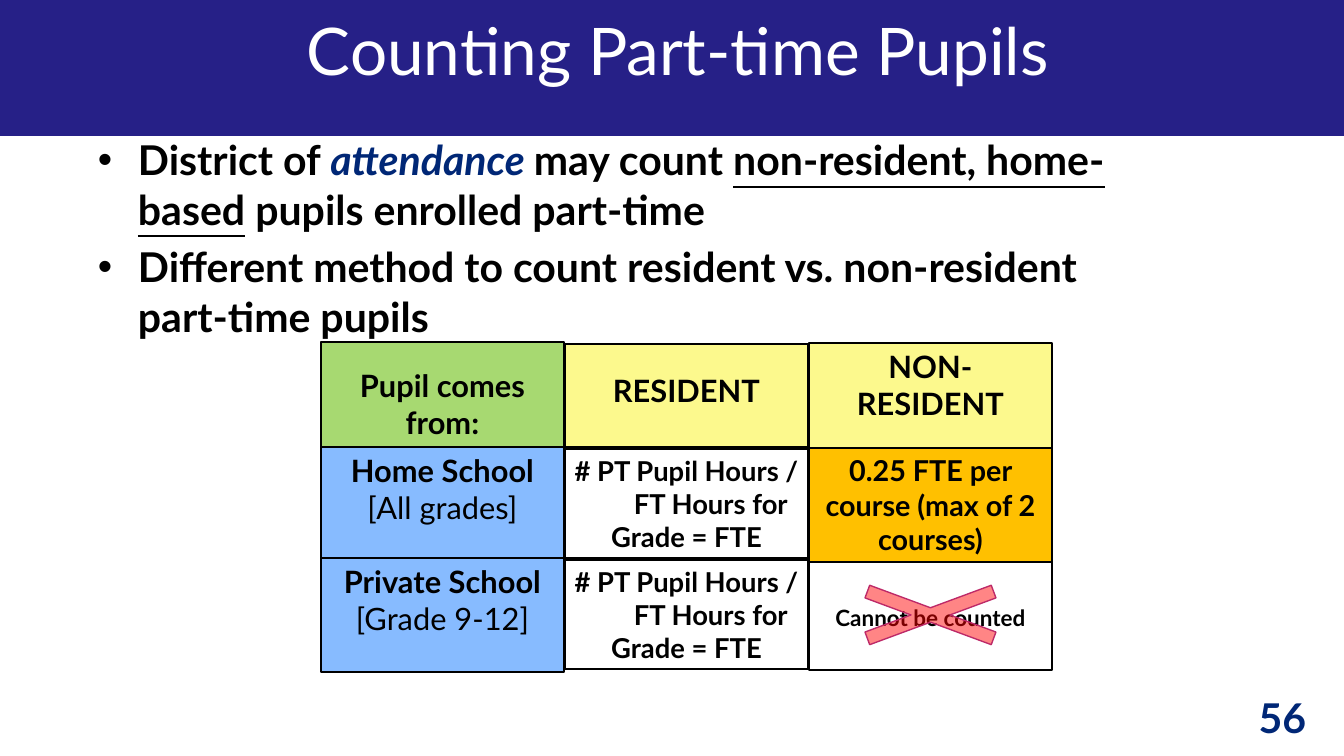
from dataclasses import dataclass

from lxml.etree import SubElement
from pptx import Presentation
from pptx.dml.color import RGBColor
from pptx.enum.shapes import MSO_SHAPE as Preset
from pptx.enum.text import MSO_ANCHOR as Anchor, MSO_AUTO_SIZE as AutoSize, PP_ALIGN as Align
from pptx.oxml.ns import qn
from pptx.util import Emu, Pt

SCALE = 914400 / 98.5  # EMU per px
FONT = "Lato"
COLORS = {
    "banner": "262087", "navy": "002776", "white": "FFFFFF", "black": "000000",
    "green": "A7D971", "blue": "87BBFF", "yellow": "FCF98D", "orange": "FFC000",
    "red": "FF0000", "crimson": "BD2968",
}
COLUMN_LEFT, COLUMN_STEP, COLUMN_WIDTH = 321, 244, 243


@dataclass
class Span:
    text: str
    size: float = 22.5
    color: str = "black"
    bold: bool = True
    italic: bool = False
    underline: bool = False


@dataclass
class Line:
    spans: list[Span]
    align: Align = Align.CENTER
    indent: int = 0
    bullet: bool = False


@dataclass
class Cell:
    column: int
    top: int
    height: int
    fill: str | None
    lines: list[Line]
    inset_top: int = 5


def px(value: int) -> Emu:
    return Emu(round(value * SCALE))


def rgb(name: str) -> RGBColor:
    return RGBColor.from_string(COLORS[name])


def set_all(target, values: dict) -> None:
    for name, value in values.items():
        setattr(target, name, value)


def write(shape, lines: list[Line], inset_top: int = 5) -> None:
    frame = shape.text_frame
    set_all(frame, {
        "word_wrap": True, "auto_size": AutoSize.NONE, "vertical_anchor": Anchor.TOP,
        "margin_left": px(9), "margin_right": px(9),
        "margin_top": px(inset_top), "margin_bottom": px(5),
    })
    for index, line in enumerate(lines):
        para = frame.add_paragraph() if index else frame.paragraphs[0]
        props = para._p.get_or_add_pPr()
        if line.bullet:
            props.set("marL", str(px(line.indent)))
            props.set("indent", str(-px(line.indent)))
            SubElement(props, qn("a:buFont")).set("typeface", "Arial")
            SubElement(props, qn("a:buChar")).set("char", "•")
            para.space_after = Pt(6.1)
        elif line.indent:
            props.set("marL", "0")
            props.set("indent", str(px(line.indent)))
        para.alignment = line.align
        for span in line.spans:
            run = para.add_run()
            run.text = span.text
            set_all(run.font, {
                "name": FONT, "size": Pt(span.size), "bold": span.bold,
                "italic": span.italic, "underline": span.underline,
            })
            run.font.color.rgb = rgb(span.color)


def draw(shapes, preset: Preset, box: tuple[int, int, int, int],
         fill: str | None, outline: str | None):
    shape = shapes.add_shape(preset, *map(px, box))
    shape.shadow.inherit = False
    if fill:
        shape.fill.solid()
        shape.fill.fore_color.rgb = rgb(fill)
    else:
        shape.fill.background()
    if outline:
        shape.line.color.rgb = rgb(outline)
        shape.line.width = Pt(1)
    else:
        shape.line.fill.background()
    return shape


def add_text(page, box: tuple[int, int, int, int], lines: list[Line]) -> None:
    write(page.shapes.add_textbox(*map(px, box)), lines)


def school(name: str, grades: str) -> list[Line]:
    return [Line([Span(name)]), Line([Span(grades, bold=False)])]


HOURS = [
    Line([Span("# PT Pupil Hours /", 20)]),
    Line([Span("FT Hours for Grade = FTE", 20)], indent=48),
]
CELLS = [
    Cell(0, 342, 142, "green", [Line([Span("Pupil comes from:")])], 25),
    Cell(0, 447, 122, "blue", school("Home School", "[All grades]")),
    Cell(0, 558, 114, "blue", school("Private School", "[Grade 9-12]")),
    Cell(1, 344, 103, "yellow", [Line([Span("RESIDENT")])], 28),
    Cell(2, 343, 122, "yellow", [Line([Span("NON-RESIDENT")])]),
    Cell(2, 448, 114, "orange", [Line([Span("0.25 FTE per course (max of 2 courses)", 21)])]),
    Cell(1, 560, 109, None, HOURS),
    Cell(1, 449, 109, None, HOURS),
    Cell(2, 562, 108, None, [Line([Span("Cannot be counted", 16.4)])], 42),
]
POINTS = [
    [
        Span("District of ", 30),
        Span("attendance ", 30, "navy", italic=True),
        Span("may count ", 30),
        Span("non-resident, home-based", 30, underline=True),
        Span(" pupils enrolled part-time", 30),
    ],
    [Span("Different method to count resident vs. non-resident part-time pupils", 30)],
]


def main() -> None:
    deck = Presentation()
    deck.slide_width, deck.slide_height = px(1344), px(756)
    page = deck.slides.add_slide(deck.slide_layouts[5])

    # Banner behind the title
    banner = draw(page.shapes, Preset.RECTANGLE, (-1, 0, 1346, 136), "banner", None)
    page.shapes._spTree.insert(2, banner._element)
    title = page.shapes.title
    set_all(title, {"left": px(12), "top": px(14), "width": px(1332), "height": px(126)})
    write(title, [Line([Span("Counting Part-time Pupils", 48, "white", bold=False)])])
    title.text_frame.paragraphs[0].line_spacing = 0.9

    # Slide number
    add_text(page, (1221, 687, 123, 60), [Line([Span("56", 30, "navy")])])

    # Grid of counting methods
    grid = page.shapes.add_group_shape().shapes
    for cell in CELLS:
        left = COLUMN_LEFT + cell.column * COLUMN_STEP
        shape = draw(grid, Preset.RECTANGLE, (left, cell.top, COLUMN_WIDTH, cell.height),
                     cell.fill, "black")
        write(shape, cell.lines, cell.inset_top)

    # Translucent cross over the last cell
    cross_left = COLUMN_LEFT + 2 * COLUMN_STEP
    cross = draw(grid, Preset.MATH_MULTIPLY, (cross_left, 570, COLUMN_WIDTH, 90),
                 "red", "crimson")
    cross.adjustments[0] = 0.15
    color = cross._element.spPr.find(qn("a:solidFill")).find(qn("a:srgbClr"))
    SubElement(color, qn("a:alpha")).set("val", "48000")

    # Bullet points
    add_text(page, (89, 130, 1077, 217),
             [Line(spans, Align.LEFT, 40, bullet=True) for spans in POINTS])

    deck.save("out.pptx")


if __name__ == "__main__":
    main()
